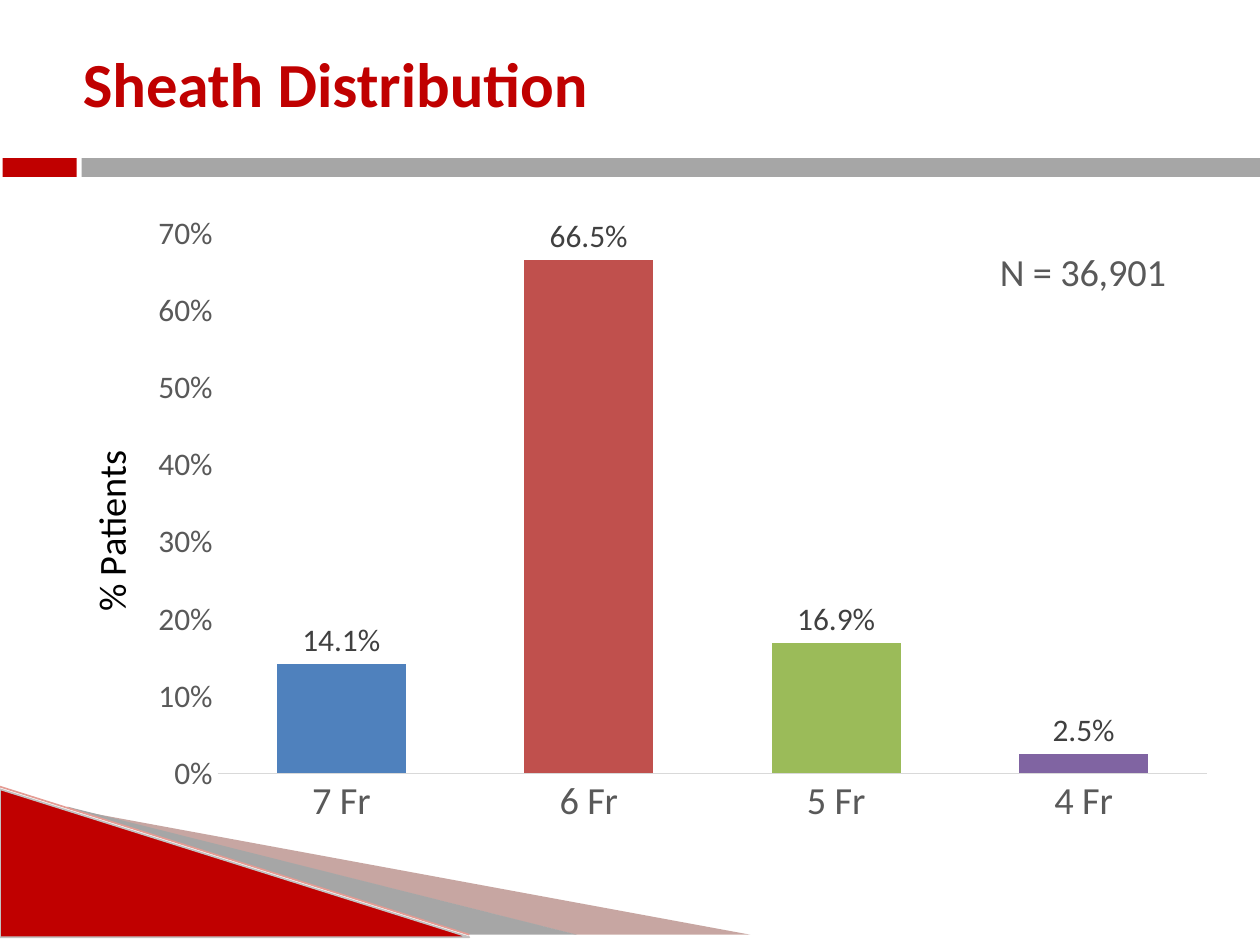
from lxml.etree import SubElement
from pptx import Presentation
from pptx.chart.data import CategoryChartData
from pptx.dml.color import RGBColor
from pptx.enum.chart import XL_CHART_TYPE, XL_LABEL_POSITION, XL_TICK_MARK
from pptx.enum.shapes import MSO_CONNECTOR, MSO_SHAPE
from pptx.enum.text import MSO_ANCHOR, PP_ALIGN
from pptx.oxml import parse_xml
from pptx.oxml.ns import nsdecls, qn
from pptx.util import Inches, Pt

FONT = "Calibri"
RED = "C00000"
GRAY = "A6A6A6"
TEXT_GRAY = "595959"
SHEATHS = [
    ("7 Fr", 0.141, "4F81BD"),
    ("6 Fr", 0.665, "C0504D"),
    ("5 Fr", 0.169, "9BBB59"),
    ("4 Fr", 0.025, "8064A2"),
]


def rgb(value):
    """Return a colour from a hex string."""
    return RGBColor.from_string(value)


def style_font(font, size, color, bold=False):
    """Set face, size, colour and weight of a font."""
    font.name = FONT
    font.size = Pt(size)
    font.bold = bold
    font.color.rgb = rgb(color)


def paint(shape, fill, line=None):
    """Give a shape a flat fill and an optional 1 pt outline."""
    shape.shadow.inherit = False
    shape.fill.solid()
    shape.fill.fore_color.rgb = rgb(fill)
    if line:
        shape.line.color.rgb = rgb(line)
        shape.line.width = Pt(1)
    else:
        shape.line.fill.background()


def add_block(slide, kind, box, fill, line=None):
    """Add a preset shape at left, top, width, height."""
    block = slide.shapes.add_shape(kind, *map(Inches, box))
    paint(block, fill, line)


def add_wedge(slide, points, fill, alpha=100):
    """Add a closed outline with a fill of the given opacity."""
    start, *rest = [(Inches(x), Inches(y)) for x, y in points]
    builder = slide.shapes.build_freeform(*start)
    builder.add_line_segments(rest, close=True)
    wedge = builder.convert_to_shape()
    paint(wedge, fill)
    if alpha < 100:
        color = wedge.fill._xPr.find(".//" + qn("a:srgbClr"))
        SubElement(color, qn("a:alpha")).set("val", str(alpha * 1000))


def add_edge(slide, start, end, color, width):
    """Add a straight line without shadow."""
    edge = slide.shapes.add_connector(
        MSO_CONNECTOR.STRAIGHT, *map(Inches, start + end))
    edge.line.color.rgb = rgb(color)
    edge.line.width = Pt(width)
    SubElement(edge._element.spPr, qn("a:effectLst"))


def add_title(slide, text):
    """Place and format the title placeholder."""
    title = slide.shapes.title
    title.left, title.top, title.width, title.height = map(
        Inches, (0.36, 0.21, 7, 0.89))
    frame = title.text_frame
    frame.vertical_anchor = MSO_ANCHOR.MIDDLE
    heading = frame.paragraphs[0]
    heading.alignment = PP_ALIGN.LEFT
    heading._p.get_or_add_pPr().set("marL", str(Inches(0.2)))
    run = heading.add_run()
    run.text = text
    style_font(run.font, 36, RED, bold=True)


def set_layout(parent, index, inner=False, **fractions):
    """Give a chart part a manual layout in fractions of the chart."""
    for old in parent.findall(qn("c:layout")):
        parent.remove(old)
    target = '<c:layoutTarget val="inner"/>' if inner else ""
    sizes = "".join(f'<c:{k} val="{v}"/>' for k, v in fractions.items())
    parent.insert(index, parse_xml(
        f'<c:layout {nsdecls("c")}><c:manualLayout>{target}'
        f'<c:xMode val="edge"/><c:yMode val="edge"/>{sizes}'
        '</c:manualLayout></c:layout>'))


def add_chart_text(title, text, color, x, y):
    """Write and place a chart or axis title."""
    run = title.text_frame.paragraphs[0].add_run()
    run.text = text
    style_font(run.font, 22, color)
    set_layout(title._element, 1, x=x, y=y)


def format_axes(chart):
    """Style the category axis and the percentage axis."""
    category, value = chart.category_axis, chart.value_axis
    for axis, size in ((category, 22), (value, 18)):
        axis.has_major_gridlines = False
        axis.major_tick_mark = XL_TICK_MARK.NONE
        axis.minor_tick_mark = XL_TICK_MARK.NONE
        style_font(axis.tick_labels.font, size, TEXT_GRAY)
    category.format.line.color.rgb = rgb("D9D9D9")
    category.format.line.width = Pt(0.75)
    value.format.line.fill.background()
    value.minimum_scale, value.maximum_scale = 0, 0.7
    value.major_unit = 0.1
    value.tick_labels.number_format = "0%"
    value.tick_labels.number_format_is_linked = False
    add_chart_text(value.axis_title, "% Patients", "000000", 0.015, 0.38)
    body = value.axis_title.text_frame._txBody.bodyPr
    body.set("rot", "-5400000")
    body.set("vert", "horz")


def add_sheath_chart(slide):
    """Add the column chart with one coloured series per sheath size."""
    data = CategoryChartData(number_format="0.0%")
    data.categories = [name for name, _, _ in SHEATHS]
    for row, (_, share, _) in enumerate(SHEATHS):
        data.add_series(
            f"Series {row + 1}",
            [share if i == row else None for i in range(len(SHEATHS))])
    chart = slide.shapes.add_chart(
        XL_CHART_TYPE.COLUMN_CLUSTERED,
        *map(Inches, (0.48, 1.53, 9.29, 5.29)), data).chart
    style_font(chart.font, 10, "000000")
    chart.has_legend = False
    chart.has_title = True
    add_chart_text(chart.chart_title, "N = 36,901", TEXT_GRAY, 0.8, 0.07)
    format_axes(chart)
    plot = chart.plots[0]
    plot.gap_width, plot.overlap = 92, 100
    plot.vary_by_categories = False
    for series, (_, _, color) in zip(plot.series, SHEATHS):
        series.format.fill.solid()
        series.format.fill.fore_color.rgb = rgb(color)
        labels = series.data_labels
        labels.show_value = True
        labels.position = XL_LABEL_POSITION.OUTSIDE_END
        labels.number_format = "0.0%"
        labels.number_format_is_linked = False
        style_font(labels.font, 18, "404040")
    set_layout(chart._chartSpace.chart.plotArea, 0, inner=True,
               x=0.135, y=0.062, w=0.849, h=0.814)


def add_decoration(slide):
    """Add the corner wedges and the band under the title."""
    add_wedge(slide, [(0.56, 6.45), (5.98, 7.45), (4.59, 7.45), (0.56, 6.44)],
              "742217", alpha=40)
    add_wedge(slide, [(0.54, 6.43), (4.6, 7.45), (3.74, 7.45), (0.55, 6.44)],
              GRAY)
    add_block(slide, MSO_SHAPE.RIGHT_TRIANGLE, (0, 6.29, 3.74, 1.18),
              RED, "C3C1C1")
    add_edge(slide, (0, 6.27), (3.74, 7.45), "E59C94", 0.95)
    for box, fill in [((0, 1.25, 10.04, 0.17), "FFFFFF"),
                      ((0.02, 1.26, 0.59, 0.15), RED),
                      ((0.65, 1.26, 9.39, 0.15), GRAY)]:
        add_block(slide, MSO_SHAPE.RECTANGLE, box, fill)


def main():
    """Build the slide and save it."""
    deck = Presentation()
    deck.slide_width, deck.slide_height = Inches(10.04), Inches(7.5)
    slide = deck.slides.add_slide(deck.slide_layouts[5])
    add_decoration(slide)
    add_sheath_chart(slide)
    add_title(slide, "Sheath Distribution")
    deck.save("out.pptx")


if __name__ == "__main__":
    main()
